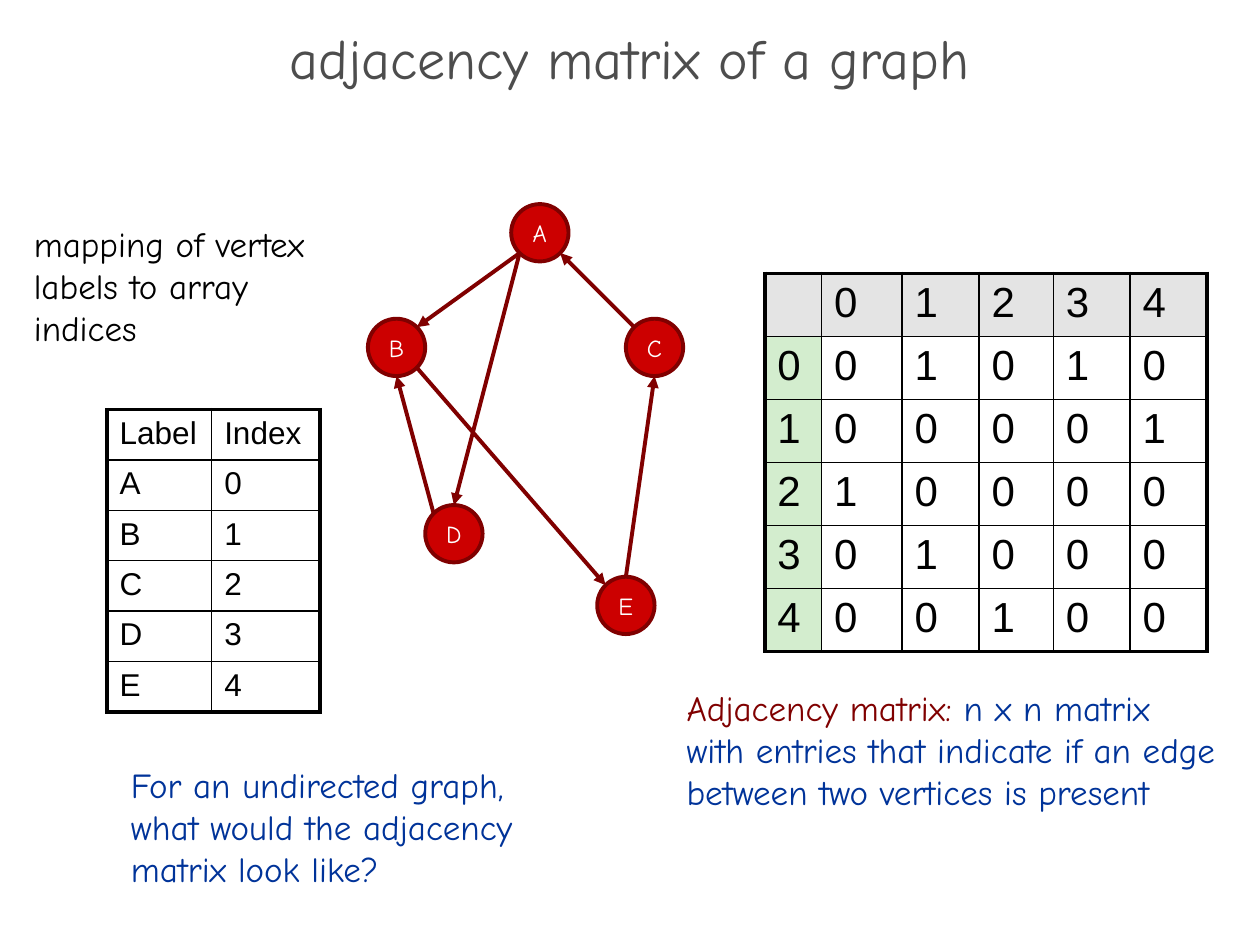
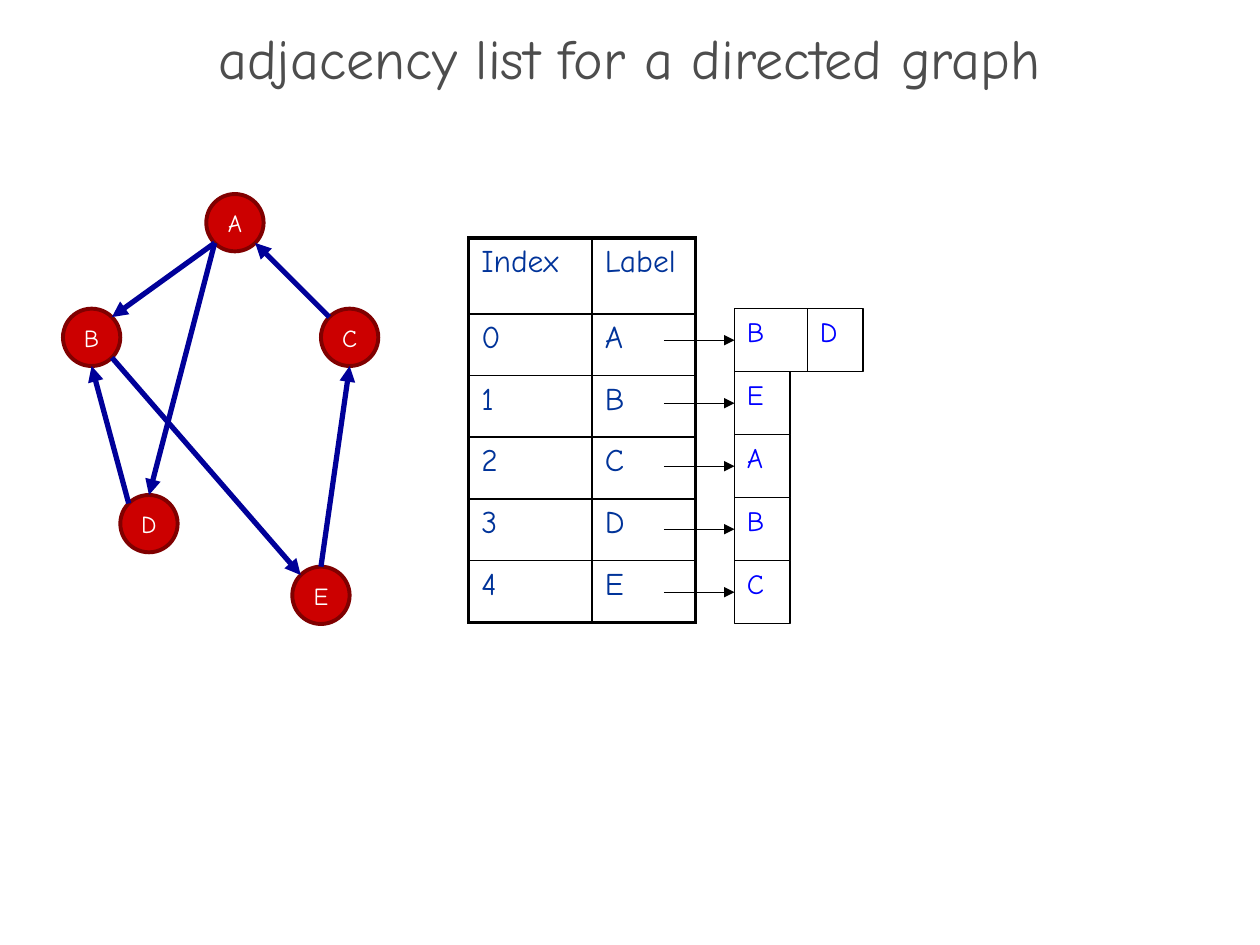
"""Build two slides on the adjacency matrix and the adjacency list of a graph."""
from math import sqrt
from lxml.etree import SubElement as Sub
from pptx import Presentation
from pptx.dml.color import RGBColor as Rgb
from pptx.enum.shapes import MSO_CONNECTOR as Link, MSO_SHAPE as Kind
from pptx.enum.text import MSO_ANCHOR as Anchor, PP_ALIGN as Align
from pptx.oxml import parse_xml
from pptx.oxml.ns import nsdecls, qn
from pptx.util import Inches, Pt

WHITE, BLACK, GREY = Rgb(255, 255, 255), Rgb(0, 0, 0), Rgb(0x4D, 0x4D, 0x4D)
RED, MAROON = Rgb(0xCC, 0, 0), Rgb(0x80, 0, 0)
NAVY, BLUE, BRIGHT = Rgb(0, 0, 0x99), Rgb(0, 0x33, 0x99), Rgb(0, 0, 0xFF)
SILVER, GREEN = Rgb(0xE4, 0xE4, 0xE4), Rgb(0xD3, 0xED, 0xCE)
HAND, PLAIN = "Comic Neue", "Arial"

LABELS = "ABCDE"
SPOTS = {"A": (5, 0), "B": (0, 4), "C": (9, 4), "D": (2, 10.5), "E": (8, 13)}
EDGES = [("A", "B", "SW", "NE"), ("A", "D", "SW", "N"), ("B", "E", "SE", "NW"),
         ("C", "A", "NW", "SE"), ("D", "B", "NW", "S"), ("E", "C", "N", "S")]
NEXT = {a: [end for start, end, *_ in EDGES if start == a] for a in LABELS}
DIAG = sqrt(0.5)
SIDES = {"N": (0, -1), "S": (0, 1), "NW": (-DIAG, -DIAG), "NE": (DIAG, -DIAG),
         "SW": (-DIAG, DIAG), "SE": (DIAG, DIAG)}
UNIT = 0.91 / 4

MAP = [["Label", "Index"]] + [[a, str(i)] for i, a in enumerate(LABELS)]
HEADS = [["Index", "Label"]] + [[str(i), a] for i, a in enumerate(LABELS)]
MATRIX = [[""] + [str(i) for i in range(len(LABELS))]] + [
    [str(i)] + [str(int(b in NEXT[a])) for b in LABELS] for i, a in enumerate(LABELS)]
NOTES = [
    ((0.17, 1.72, 2.59, 1.11), [[("mapping of vertex", BLACK)],
                                [("labels to array indices", BLACK)]]),
    ((5.35, 5.4, 4.41, 1.45), [[("Adjacency matrix: ", MAROON),
                                ("n x n matrix with entries that indicate if an edge "
                                 "between two vertices is present", BLUE)]]),
    ((0.94, 6.01, 3.86, 1.11), [[("For an undirected graph,", BLUE)],
                                [("what would the adjacency", BLUE)],
                                [("matrix look like?", BLUE)]]),
]


def style(run, size, color, face=HAND):
    run.font.size, run.font.name = Pt(size), face
    run.font.color.rgb = color


def add_slide(deck, title):
    slide = deck.slides.add_slide(deck.slide_layouts[5])
    head = slide.shapes.title
    head.left, head.top = 0, Inches(0.27)
    head.width, head.height = deck.slide_width, Inches(0.5)
    frame = head.text_frame
    frame.text, frame.vertical_anchor = title, Anchor.MIDDLE
    par = frame.paragraphs[0]
    par.alignment, par.line_spacing = Align.CENTER, 0.7
    style(par.runs[0], 32, GREY)
    return slide.shapes


def add_box(shapes, kind, place, text, size, color, fill, edge, width):
    box = shapes.add_shape(kind, *map(Inches, place))
    box.shadow.inherit = False
    if fill:
        box.fill.solid()
        box.fill.fore_color.rgb = fill
    else:
        box.fill.background()
    box.line.color.rgb, box.line.width = edge, Pt(width)
    frame = box.text_frame
    frame.text, frame.word_wrap = text, False
    style(frame.paragraphs[0].runs[0], size, color)
    return box


def add_arrow(shapes, start, end, color, width):
    line = shapes.add_connector(Link.STRAIGHT, *map(Inches, (*start, *end)))
    line.line.color.rgb, line.line.width = color, Pt(width)
    props = line.element.spPr
    Sub(props.find(qn("a:ln")), qn("a:tailEnd"), type="triangle")
    Sub(props, qn("a:effectLst"))
    return line


def add_graph(shapes, left, top, color, width):
    group = shapes.add_group_shape().shapes
    for name, (col, row) in SPOTS.items():
        place = left + col * UNIT, top + row * UNIT, 2 * UNIT, 2 * UNIT
        node = add_box(group, Kind.OVAL, place, name, 14, WHITE, RED, MAROON, 2.25)
        node.text_frame.vertical_anchor = Anchor.MIDDLE
        node.text_frame.paragraphs[0].alignment = Align.CENTER

    def rim(name, side):
        (col, row), (dx, dy) = SPOTS[name], SIDES[side]
        return left + (col + 1 + dx) * UNIT, top + (row + 1 + dy) * UNIT

    for start, end, out, into in EDGES:
        add_arrow(group, rim(start, out), rim(end, into), color, width)


def add_borders(cell, thick):
    props = cell._tc.get_or_add_tcPr()
    for i, (side, bold) in enumerate(zip("LRTB", thick)):
        props.insert(i, parse_xml(
            f'<a:ln{side} {nsdecls("a")} w="{Pt(2.25 if bold else 1)}"><a:solidFill>'
            f'<a:srgbClr val="{BLACK}"/></a:solidFill></a:ln{side}>'))


def add_grid(shapes, left, top, cols, rows, data, size, color, face, top_fill=None, side_fill=None):
    place = map(Inches, (left, top, sum(cols), sum(rows)))
    table = shapes.add_table(len(rows), len(cols), *place).table
    table.first_row = table.horz_banding = False
    for col, wide in zip(table.columns, cols):
        col.width = Inches(wide)
    for r, (high, texts) in enumerate(zip(rows, data)):
        table.rows[r].height = Inches(high)
        for c, text in enumerate(texts):
            cell = table.cell(r, c)
            cell.text = text
            for run in cell.text_frame.paragraphs[0].runs:
                style(run, size, color, face)
            fill = top_fill if r == 0 else side_fill if c == 0 else None
            if fill:
                cell.fill.solid()
                cell.fill.fore_color.rgb = fill
            else:
                cell.fill.background()
            add_borders(cell, (c == 0, c == len(cols) - 1, r == 0, r == len(rows) - 1))


def add_note(shapes, place, pars):
    frame = shapes.add_textbox(*map(Inches, place)).text_frame
    frame.word_wrap = True
    for i, parts in enumerate(pars):
        par = frame.add_paragraph() if i else frame.paragraphs[0]
        for text, color in parts:
            run = par.add_run()
            run.text = text
            style(run, 20, color)


def add_lists(shapes, left, top, high):
    for i, ends in enumerate(NEXT.values()):
        x, y = left, top + i * high
        for j, name in enumerate(ends):
            wide = 0.58 if j < len(ends) - 1 else 0.44
            box = add_box(shapes, Kind.RECTANGLE, (x, y, wide, high), name, 16,
                          BRIGHT, None, BLACK, 0.75)
            box.text_frame.vertical_anchor = Anchor.TOP
            box.text_frame.paragraphs[0].alignment = Align.LEFT
            if j == 0:
                mid = y + high / 2
                line = add_arrow(shapes, (x - 0.56, mid), (x, mid), BLACK, 0.75)
                line.end_connect(box, 1)
            x += wide


def main():
    deck = Presentation()
    deck.slide_width, deck.slide_height = Inches(10), Inches(7.5)

    shapes = add_slide(deck, "adjacency matrix of a graph")
    add_graph(shapes, 2.92, 1.62, MAROON, 2.25)
    add_grid(shapes, 0.85, 3.25, [0.83, 0.86], [0.4] * 6, MAP, 18, BLACK, PLAIN)
    add_grid(shapes, 6.07, 2.17, [0.45, 0.64, 0.61, 0.59, 0.61, 0.61], [0.5] * 6,
             MATRIX, 24, BLACK, PLAIN, SILVER, GREEN)
    for place, pars in NOTES:
        add_note(shapes, place, pars)

    shapes = add_slide(deck, "adjacency list for a directed graph")
    add_graph(shapes, 0.5, 1.54, NAVY, 3)
    add_grid(shapes, 3.72, 1.89, [0.98, 0.82], [0.6] + [0.49] * 5, HEADS, 18, BLUE, HAND)
    add_lists(shapes, 5.83, 2.45, 0.5)
    deck.save("out.pptx")


if __name__ == "__main__":
    main()
